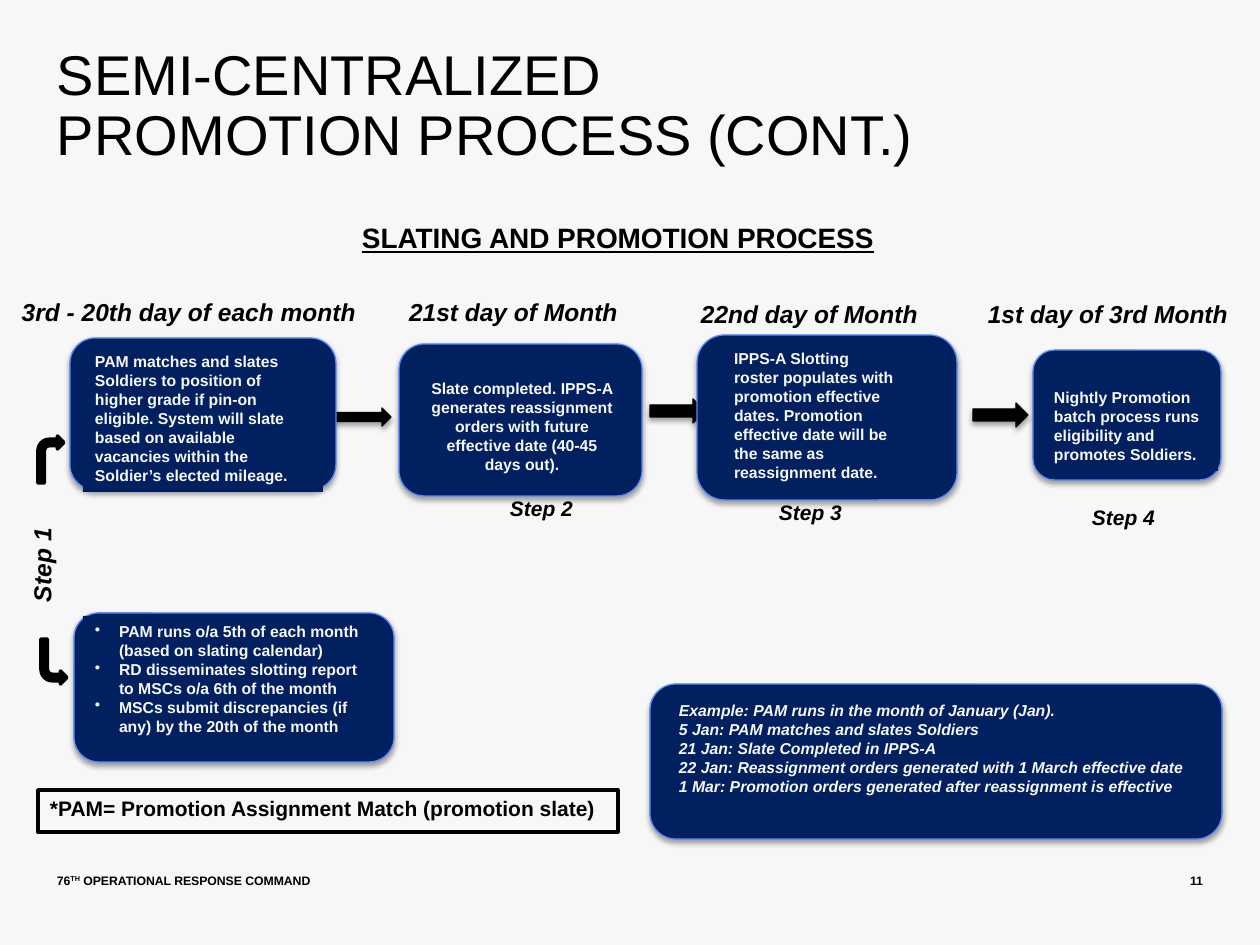
import pptx
import pptx.util
import pptx.dml.color
import pptx.enum.shapes
import pptx.enum.text
import pptx.oxml
import pptx.oxml.ns

RGB = pptx.dml.color.RGBColor
SHAPE = pptx.enum.shapes.MSO_SHAPE
ALIGN = pptx.enum.text.PP_ALIGN
ANCHOR = pptx.enum.text.MSO_ANCHOR
Pt = pptx.util.Pt
SCALE = 914400 / 126  # EMU in one px

PAPER = RGB(0xF7, 0xF7, 0xF7)
NAVY = RGB(0x00, 0x20, 0x60)
EDGE = RGB(0x5B, 0x8A, 0xFB)
BLACK = RGB(0, 0, 0)

# ---- Content: boxes are left, top, width, height in px ----
TITLE = "SEMI-CENTRALIZED PROMOTION PROCESS (CONT.)"
HEADING = "SLATING AND PROMOTION PROCESS"
GLOSSARY = "*PAM= Promotion Assignment Match (promotion slate)"
FOOTER = [("76", 0), ("TH", 30000), (" OPERATIONAL RESPONSE COMMAND", 0)]
PAGE = [("11", 0)]

DATES = [
    ("3rd - 20th day of each month", (0, 291, 378, 43)),
    ("21st day of Month", (380, 291, 267, 43)),
    ("22nd day of Month", (676, 293, 267, 43)),
    ("1st day of 3rd Month", (966, 293, 284, 43)),
]
STEPS = [
    ("Step 2", (498, 490, 111, 38)),
    ("Step 3", (767, 494, 111, 38)),
    ("Step 4", (1080, 499, 96, 38)),
]
STEP_ONE = ("Step 1", (-9, 541, 103, 43))

ARROWS = [(336, 408, 55, 18), (650, 399, 55, 24), (973, 403, 55, 24)]
BENT_UP = (38, 436, 26, 47)
BENT_DOWN = (41, 639, 26, 45)

CARDS = [
    dict(card=(70, 338, 266, 152), body=(83, 346, 240, 146), text=[
        "PAM matches and slates Soldiers to position of higher grade if pin-on eligible. "
        "System will slate based on available vacancies within the Soldier’s elected mileage."]),
    dict(card=(74, 613, 320, 149), body=(83, 616, 293, 127), bullets=True, text=[
        "PAM runs o/a 5th of each month (based on slating calendar)",
        "RD disseminates slotting report to MSCs o/a 6th of the month",
        "MSCs submit discrepancies (if any) by the 20th of the month"]),
    dict(card=(399, 344, 243, 152), body=(417, 354, 210, 127), top=25, align=ALIGN.CENTER, text=[
        "Slate completed. IPPS-A generates reassignment orders with future "
        "effective date (40-45 days out)."]),
    dict(card=(697, 335, 260, 165), body=(722, 343, 185, 146), text=[
        "IPPS-A Slotting roster populates with promotion effective dates. "
        "Promotion effective date will be the same as reassignment date."]),
    dict(card=(1033, 350, 188, 130), body=(1042, 363, 176, 108), top=25, text=[
        "Nightly Promotion batch process runs eligibility and promotes Soldiers."]),
    dict(card=(650, 684, 572, 155), body=(667, 695, 539, 130), italic=True, text=[
        "Example: PAM runs in the month of January (Jan).",
        "5 Jan: PAM matches and slates Soldiers",
        "21 Jan: Slate Completed in IPPS-A",
        "22 Jan: Reassignment orders generated with 1 March effective date",
        "1 Mar: Promotion orders generated after reassignment is effective"]),
]


# ---- Helpers ----
def px(*values):
    return [round(value * SCALE) for value in values]


def style(font, size, color=BLACK, **extra):
    look = dict(name="Arial", size=Pt(size), bold=True, **extra)
    for key, value in look.items():
        setattr(font, key, value)
    font.color.rgb = color


def set_frame(frame, insets=(12, 6, 12, 6), anchor=ANCHOR.TOP, wrap=True):
    left, top, right, bottom = px(*insets)
    look = dict(margin_left=left, margin_top=top, margin_right=right, margin_bottom=bottom,
                vertical_anchor=anchor, word_wrap=wrap,
                auto_size=pptx.enum.text.MSO_AUTO_SIZE.NONE)
    for key, value in look.items():
        setattr(frame, key, value)


def add_bullet(paragraph):
    properties = paragraph._p.get_or_add_pPr()
    indent = px(24)[0]
    properties.set("marL", str(indent))
    properties.set("indent", str(-indent))
    bullet = pptx.oxml.parse_xml(f'<a:buChar {pptx.oxml.ns.nsdecls("a")} char="•"/>')
    properties.append(bullet)


def write(frame, lines, size, color=BLACK, align=ALIGN.LEFT, bullets=False, **extra):
    for index, line in enumerate(lines):
        paragraph = frame.add_paragraph() if index else frame.paragraphs[0]
        if bullets:
            add_bullet(paragraph)
        paragraph.alignment = align
        run = paragraph.add_run()
        run.text = line
        style(run.font, size, color, **extra)


def add_label(text, box, size, **look):
    label = slide.shapes.add_textbox(*px(*box))
    set_frame(label.text_frame)
    write(label.text_frame, [text], size, **look)
    return label


def add_block(kind, box, fill=None, line=None, width=0.75, shadow=False):
    block = slide.shapes.add_shape(kind, *px(*box))
    block.shadow.inherit = False
    for paint, color in ((block.fill, fill), (block.line.fill, line)):
        if color is None:
            paint.background()
        else:
            paint.solid()
            paint.fore_color.rgb = color
    if line is not None:
        block.line.width = Pt(width)
    if shadow:
        effects = block._element.spPr.find(pptx.oxml.ns.qn("a:effectLst"))
        effects.append(pptx.oxml.parse_xml(
            f'<a:outerShdw {pptx.oxml.ns.nsdecls("a")} blurRad="{Pt(3.1)}" dist="{Pt(1.8)}" '
            'dir="5400000" rotWithShape="0"><a:srgbClr val="000000">'
            '<a:alpha val="35000"/></a:srgbClr></a:outerShdw>'))
    return block


def add_footer(pieces, box, align):
    footer = slide.shapes.add_textbox(*px(*box))
    set_frame(footer.text_frame, (0, 0, 0, 0), ANCHOR.BOTTOM, wrap=False)
    paragraph = footer.text_frame.paragraphs[0]
    paragraph.alignment = align
    for text, baseline in pieces:
        run = paragraph.add_run()
        run.text = text
        style(run.font, 7)
        if baseline:
            run.font._element.set("baseline", str(baseline))


# ---- Slide and title ----
deck = pptx.Presentation()
deck.slide_width, deck.slide_height = px(1260, 945)
slide = deck.slides.add_slide(deck.slide_layouts[5])
slide.background.fill.solid()
slide.background.fill.fore_color.rgb = PAPER

title = slide.shapes.title
title.left, title.top, title.width, title.height = px(57, 47, 901, 126)
set_frame(title.text_frame, (0, 0, 0, 0))
write(title.text_frame, [TITLE], 32)
title.text_frame.paragraphs[0].line_spacing = 0.9
title.text_frame.paragraphs[0].runs[0].font.bold = False

# ---- Headings ----
add_label(HEADING, (350, 215, 582, 47), 16, underline=True)
for text, box in DATES:
    add_label(text, box, 14, align=ALIGN.CENTER, italic=True)

# ---- Arrows between the steps ----
for box in ARROWS:
    add_block(SHAPE.RIGHT_ARROW, box, BLACK, BLACK, shadow=True)
add_block(SHAPE.BENT_ARROW, BENT_UP, BLACK, BLACK, 2)
bent_down = add_block(SHAPE.BENT_ARROW, BENT_DOWN, BLACK, BLACK, 2)
bent_down.rotation = 180
bent_down._element.spPr.xfrm.set("flipH", "1")

# ---- Cards ----
for item in CARDS:
    add_block(SHAPE.ROUNDED_RECTANGLE, item["card"], NAVY, EDGE, shadow=True)
    body = add_block(SHAPE.RECTANGLE, item["body"], NAVY)
    set_frame(body.text_frame, (12, item.get("top", 6), 12, 6))
    write(body.text_frame, item["text"], 9, PAPER, item.get("align", ALIGN.LEFT),
          item.get("bullets", False), italic=item.get("italic", False))

# ---- Step names ----
for text, box in STEPS:
    add_label(text, box, 12, italic=True)
add_label(*STEP_ONE, 14, italic=True).rotation = 270

# ---- Glossary and footer ----
glossary = add_block(SHAPE.RECTANGLE, (38, 790, 580, 42), line=BLACK, width=2)
set_frame(glossary.text_frame)
write(glossary.text_frame, [GLOSSARY], 12)
add_footer(FOOTER, (57, 863, 554, 25), ALIGN.LEFT)
add_footer(PAGE, (1094, 863, 109, 25), ALIGN.RIGHT)

deck.save("out.pptx")
